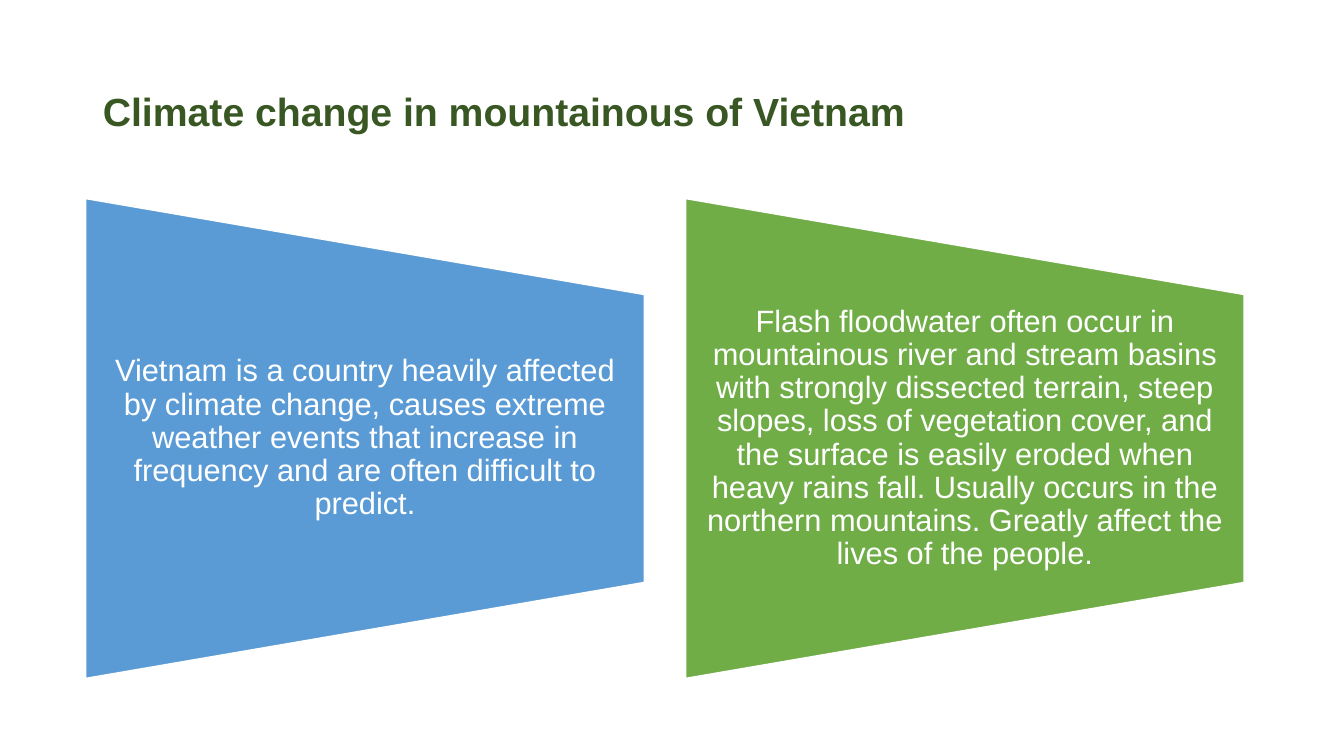
import pptx
import pptx.dml.color
import pptx.enum.shapes
import pptx.enum.text
import pptx.util

RGBColor = pptx.dml.color.RGBColor
WHITE = RGBColor(0xFF, 0xFF, 0xFF)
DARK_GREEN = RGBColor(0x38, 0x57, 0x23)
BLUE = RGBColor(0x5B, 0x9B, 0xD5)
GREEN = RGBColor(0x70, 0xAD, 0x47)

FONT = "Arial"
EMU_PER_PX = 9144  # 100 px to the inch

# Panels, as seen on the slide
PANEL_LEFT, PANEL_TOP = 85, 197
PANEL_WIDTH, PANEL_HEIGHT = 554, 476
PANEL_STEP = 595
TEXT_HEIGHT = 286

PANELS = [
    (BLUE, "Vietnam is a country heavily affected by climate change, causes "
           "extreme weather events that increase in frequency and are often "
           "difficult to predict."),
    (GREEN, "Flash floodwater often occur in mountainous river and stream "
            "basins with strongly dissected terrain, steep slopes, loss of "
            "vegetation cover, and the surface is easily eroded when heavy "
            "rains fall. Usually occurs in the northern mountains. Greatly "
            "affect the lives of the people."),
]


def px(length):
    return pptx.util.Emu(round(length * EMU_PER_PX))


def format_paragraph(paragraph, size, color, alignment, bold=False):
    paragraph.alignment = alignment
    paragraph.line_spacing = 0.9
    paragraph.font.name = FONT
    paragraph.font.size = pptx.util.Pt(size)
    paragraph.font.bold = bold
    paragraph.font.color.rgb = color


def set_title(slide, text):
    title = slide.shapes.title
    title.left, title.top, title.width, title.height = map(px, (92, 40, 1150, 145))
    frame = title.text_frame
    frame.text = text
    frame.word_wrap = True
    frame.vertical_anchor = pptx.enum.text.MSO_ANCHOR.MIDDLE
    format_paragraph(frame.paragraphs[0], 28, DARK_GREEN,
                     pptx.enum.text.PP_ALIGN.LEFT, bold=True)


def add_trapezoid(slide, left, color):
    # The shape is turned on its side about its centre, so width and height swap
    shift = (PANEL_WIDTH - PANEL_HEIGHT) / 2
    shape = slide.shapes.add_shape(
        pptx.enum.shapes.MSO_SHAPE.FLOWCHART_MANUAL_OPERATION,
        px(left + shift), px(PANEL_TOP - shift), px(PANEL_HEIGHT), px(PANEL_WIDTH))
    shape.rotation = 270
    shape.shadow.inherit = False
    shape.fill.solid()
    shape.fill.fore_color.rgb = color
    shape.line.color.rgb = WHITE
    shape.line.width = pptx.util.Pt(1)


def add_panel_text(slide, left, text):
    top = PANEL_TOP + (PANEL_HEIGHT - TEXT_HEIGHT) / 2
    box = slide.shapes.add_textbox(px(left), px(top), px(PANEL_WIDTH), px(TEXT_HEIGHT))
    frame = box.text_frame
    frame.word_wrap = True
    frame.vertical_anchor = pptx.enum.text.MSO_ANCHOR.MIDDLE
    frame.margin_left = frame.margin_right = px(15)
    frame.margin_top = frame.margin_bottom = 0
    frame.text = text
    format_paragraph(frame.paragraphs[0], 22, WHITE, pptx.enum.text.PP_ALIGN.CENTER)


def main():
    presentation = pptx.Presentation()
    presentation.slide_width = px(1333)
    presentation.slide_height = px(750)
    slide = presentation.slides.add_slide(presentation.slide_layouts[5])

    # Title
    set_title(slide, "Climate change in mountainous of Vietnam")

    # Two side-by-side panels
    for index, (color, text) in enumerate(PANELS):
        left = PANEL_LEFT + index * PANEL_STEP
        add_trapezoid(slide, left, color)
        add_panel_text(slide, left, text)

    presentation.save("out.pptx")


if __name__ == "__main__":
    main()
